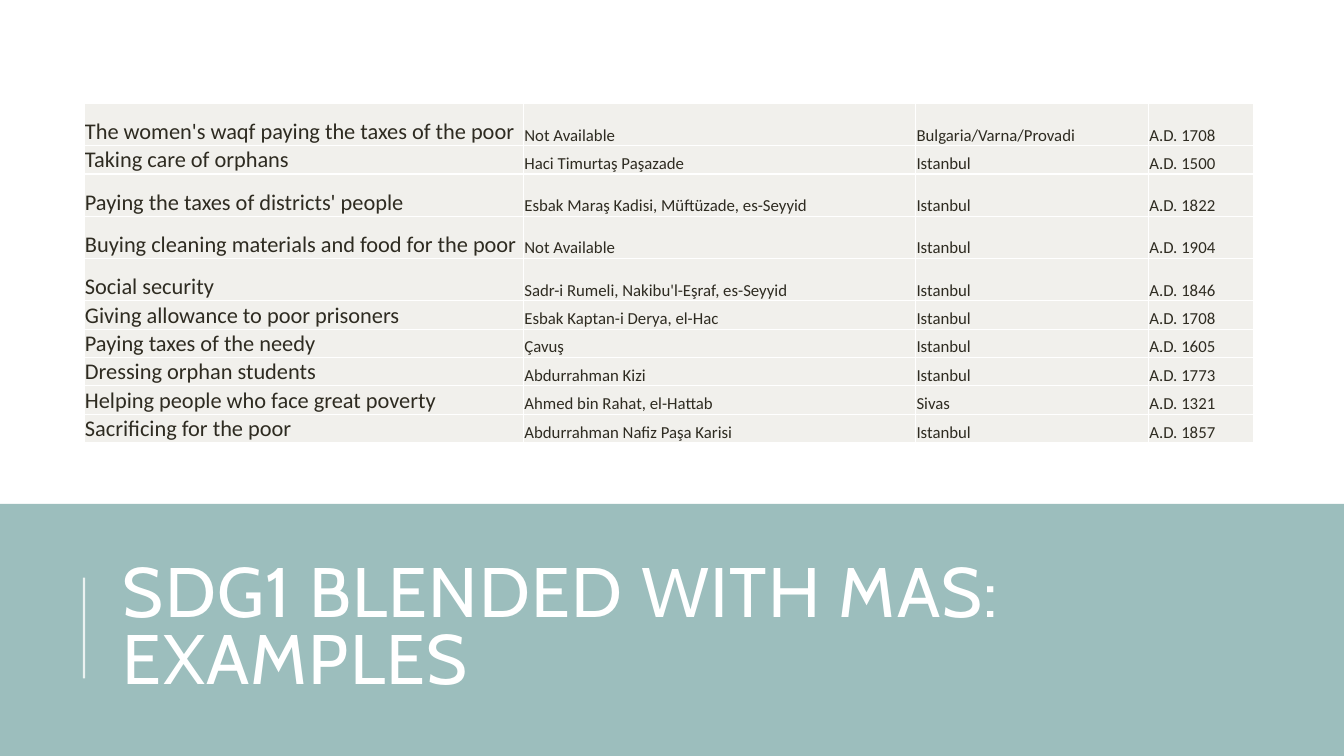
from lxml import etree
from pptx import Presentation
from pptx.dml.color import RGBColor
from pptx.enum import shapes, text
from pptx.oxml import ns
from pptx.util import Pt

COLORS = {"band": "9CBEBD", "cell": "F1F0EC", "ink": "2E2B21", "white": "FFFFFF"}
TALL, SHORT = 30.2, 19.6
COLUMN_WIDTHS = [313.9, 280.1, 166.3, 74.9]
EXAMPLES = [
    (TALL, "The women's waqf paying the taxes of the poor", "Not Available", "Bulgaria/Varna/Provadi", 1708),
    (SHORT, "Taking care of orphans", "Haci Timurtaş Paşazade", "Istanbul", 1500),
    (TALL, "Paying the taxes of districts' people", "Esbak Maraş Kadisi, Müftüzade, es-Seyyid", "Istanbul", 1822),
    (TALL, "Buying cleaning materials and food for the poor", "Not Available", "Istanbul", 1904),
    (TALL, "Social security", "Sadr-i Rumeli, Nakibu'l-Eşraf, es-Seyyid", "Istanbul", 1846),
    (SHORT, "Giving allowance to poor prisoners", "Esbak Kaptan-i Derya, el-Hac", "Istanbul", 1708),
    (SHORT, "Paying taxes of the needy", "Çavuş", "Istanbul", 1605),
    (SHORT, "Dressing orphan students", "Abdurrahman Kizi", "Istanbul", 1773),
    (SHORT, "Helping people who face great poverty", "Ahmed bin Rahat, el-Hattab", "Sivas", 1321),
    (SHORT, "Sacrificing for the poor", "Abdurrahman Nafiz Paşa Karisi", "Istanbul", 1857),
]
CELL_FORMAT = {
    "vertical_anchor": text.MSO_ANCHOR.BOTTOM,
    "margin_left": Pt(0.7),
    "margin_right": Pt(0.7),
    "margin_top": Pt(0.7),
    "margin_bottom": Pt(0),
}
TITLE_FORMAT = {
    "vertical_anchor": text.MSO_ANCHOR.MIDDLE,
    "word_wrap": True,
    "auto_size": text.MSO_AUTO_SIZE.NONE,
}


def rgb(name):
    return RGBColor.from_string(COLORS[name])


def set_font(paragraph, face, size, color):
    font = paragraph.runs[0].font
    font.name, font.size = face, Pt(size)
    font.color.rgb = rgb(color)


deck = Presentation()
deck.slide_width, deck.slide_height = Pt(960), Pt(540)
slide = deck.slides.add_slide(deck.slide_layouts[5])

heading = slide.shapes.title
heading.left, heading.top, heading.width, heading.height = Pt(80.6), Pt(391.7), Pt(765.4), Pt(118)
heading.text_frame.text = "SDG1 BLENDED WITH MAS: EXAMPLES"
for key, value in TITLE_FORMAT.items():
    setattr(heading.text_frame, key, value)
heading_line = heading.text_frame.paragraphs[0]
heading_line.alignment = text.PP_ALIGN.LEFT
heading_line.line_spacing = 0.8
set_font(heading_line, "Cabin", 50, "white")
heading_line.runs[0].font._element.set("spc", "100")

band = slide.shapes.add_shape(shapes.MSO_SHAPE.RECTANGLE, Pt(0), Pt(360), Pt(960), Pt(180))
band.shadow.inherit = False
band.fill.solid()
band.fill.fore_color.rgb = rgb("band")
band.line.fill.background()
heading.element.addprevious(band.element)

accent = slide.shapes.add_connector(shapes.MSO_CONNECTOR.STRAIGHT, Pt(60), Pt(484.6), Pt(60), Pt(412.6))
accent.line.width = Pt(1.5)
accent.line.color.rgb = rgb("white")
accent_color = accent.element.spPr.find(".//" + ns.qn("a:srgbClr"))
etree.SubElement(accent_color, ns.qn("a:alpha"), val="80000")
etree.SubElement(accent.element.spPr, ns.qn("a:effectLst"))

examples = slide.shapes.add_table(
    len(EXAMPLES), len(COLUMN_WIDTHS), Pt(60), Pt(73.8), Pt(sum(COLUMN_WIDTHS)), Pt(sum(row[0] for row in EXAMPLES))
).table
examples.first_row = examples.horz_banding = False
for column, width in zip(examples.columns, COLUMN_WIDTHS):
    column.width = Pt(width)

for row, (height, purpose, founder, place, year) in zip(examples.rows, EXAMPLES):
    row.height = Pt(height)
    for cell, wording, size in zip(row.cells, (purpose, founder, place, f"A.D. {year}"), (16, 12, 12, 12)):
        cell.text = wording
        set_font(cell.text_frame.paragraphs[0], "Calibri", size, "ink")
        for key, value in CELL_FORMAT.items():
            setattr(cell, key, value)
        cell.fill.solid()
        cell.fill.fore_color.rgb = rgb("cell")
        properties = cell._tc.get_or_add_tcPr()
        for position, side in enumerate(("lnL", "lnR", "lnT", "lnB")):
            border = etree.Element(ns.qn(f"a:{side}"), w=str(Pt(1)))
            border_fill = etree.SubElement(border, ns.qn("a:solidFill"))
            etree.SubElement(border_fill, ns.qn("a:srgbClr"), val=COLORS["white"])
            properties.insert(position, border)

deck.save("out.pptx")
